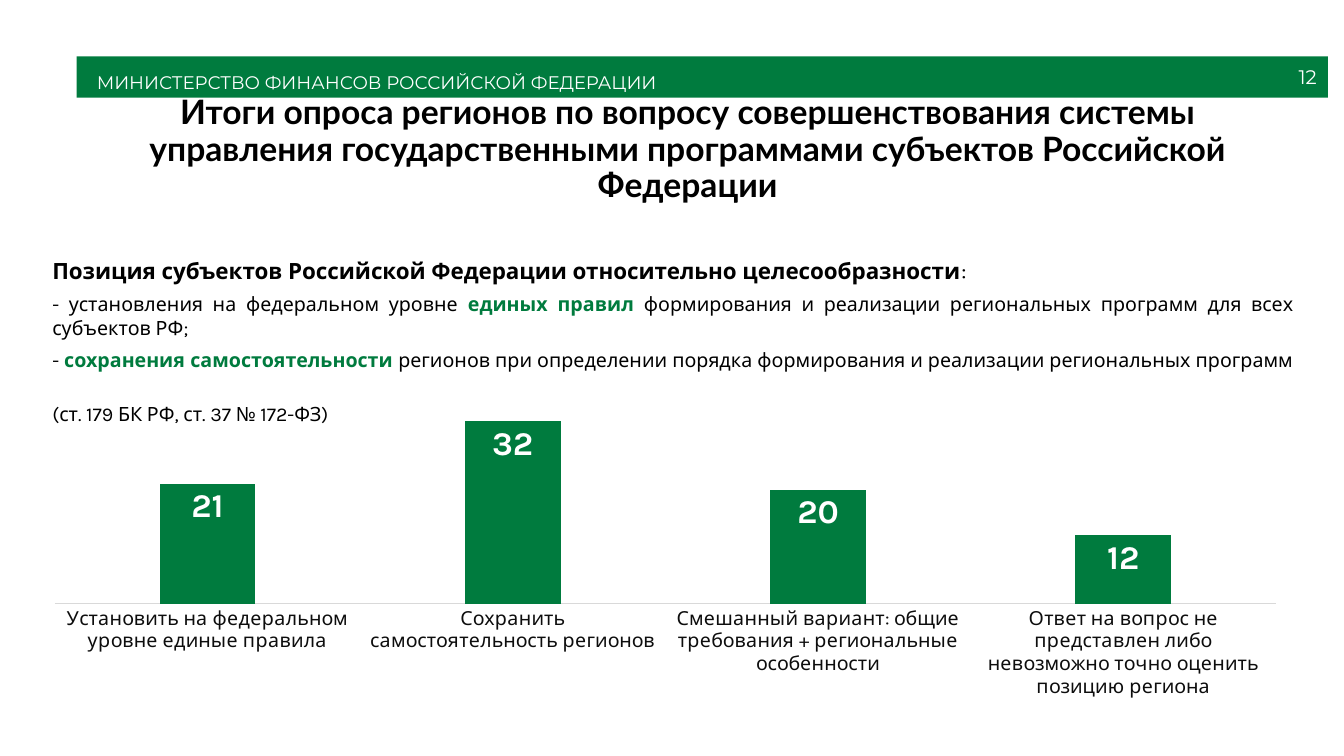
from lxml import etree
from pptx import Presentation
from pptx.chart.data import CategoryChartData
from pptx.dml.color import RGBColor
from pptx.enum.chart import XL_CHART_TYPE, XL_LABEL_POSITION, XL_TICK_LABEL_POSITION, XL_TICK_MARK
from pptx.enum.shapes import MSO_SHAPE
from pptx.enum.text import MSO_ANCHOR, PP_ALIGN
from pptx.oxml.ns import qn
from pptx.util import Inches, Pt

GREEN = RGBColor(0x00, 0x7B, 0x3E)
WHITE = RGBColor(0xFF, 0xFF, 0xFF)
BLACK = RGBColor(0x00, 0x00, 0x00)
DARK = RGBColor(0x0D, 0x0D, 0x0D)
AXIS_GREY = RGBColor(0xD9, 0xD9, 0xD9)

MINISTRY = "МИНИСТЕРСТВО ФИНАНСОВ РОССИЙСКОЙ ФЕДЕРАЦИИ"
PAGE_NUMBER = "12"
TITLE = ("Итоги опроса регионов по вопросу совершенствования системы управления "
         "государственными программами субъектов Российской Федерации")
PLAIN = {"size": 14}
HEADING = {"size": 16, "bold": True}
ACCENT = {"size": 14, "bold": True, "color": GREEN}
POSITION = [
    [("Позиция субъектов Российской Федерации относительно целесообразности", HEADING),
     (":", {"size": 16})],
    [("- установления на федеральном уровне ", PLAIN),
     ("единых правил ", ACCENT),
     ("формирования и реализации региональных программ для всех субъектов РФ;", PLAIN)],
    [("- ", PLAIN),
     ("сохранения самостоятельности ", ACCENT),
     ("регионов при определении порядка формирования и реализации региональных программ "
      "\n(ст. 179 БК РФ, ст. 37 № 172-ФЗ)", PLAIN)],
]
ANSWERS = {
    "Установить на федеральном уровне единые правила": 21,
    "Сохранить самостоятельность регионов": 32,
    "Смешанный вариант: общие требования + региональные особенности": 20,
    "Ответ на вопрос не представлен либо невозможно точно оценить позицию региона": 12,
}
PLOT_LAYOUT = {"layoutTarget": "inner", "xMode": "edge", "yMode": "edge",
               "x": 0.01, "y": 0.04, "w": 0.98, "h": 0.66}


def box(left, top, width, height):
    return [Inches(length) for length in (left, top, width, height)]


def format_font(font, size=14, name="Karla", color=BLACK, bold=False):
    font.size = Pt(size)
    font.name = name
    font.bold = bold
    font.color.rgb = color


def add_text(paragraph, text, **style):
    for index, line in enumerate(text.split("\n")):
        if index:
            paragraph.add_line_break()
        run = paragraph.add_run()
        run.text = line
        format_font(run.font, **style)


def add_header(slide):
    band = slide.shapes.add_shape(MSO_SHAPE.RECTANGLE, *box(0.76, 0.56, 12.41, 0.41))
    band.shadow.inherit = False
    band.fill.solid()
    band.fill.fore_color.rgb = GREEN
    band.line.fill.background()
    frame = band.text_frame
    frame.margin_left, frame.margin_right = Inches(0.2), 0
    frame.margin_top, frame.margin_bottom = Inches(0.04), Inches(0.08)
    frame.vertical_anchor = MSO_ANCHOR.TOP
    paragraph = frame.paragraphs[0]
    paragraph.alignment = PP_ALIGN.LEFT
    paragraph.line_spacing = 1.5
    add_text(paragraph, MINISTRY, size=13, name="Montserrat", color=WHITE)


def add_position(slide):
    frame = slide.shapes.add_textbox(*box(0.42, 2.5, 12.51, 1.25)).text_frame
    frame.word_wrap = True
    for index, runs in enumerate(POSITION):
        paragraph = frame.add_paragraph() if index else frame.paragraphs[0]
        paragraph.alignment = PP_ALIGN.JUSTIFY
        paragraph.space_after = Pt(6)
        for text, style in runs:
            add_text(paragraph, text, **style)


def set_plot_layout(chart):
    plot_area = chart._chartSpace.find(".//" + qn("c:plotArea"))
    for layout in plot_area.findall(qn("c:layout")):
        plot_area.remove(layout)
    layout = etree.Element(qn("c:layout"))
    manual = etree.SubElement(layout, qn("c:manualLayout"))
    for tag, value in PLOT_LAYOUT.items():
        etree.SubElement(manual, qn("c:" + tag)).set("val", str(value))
    plot_area.insert(0, layout)


def add_answers_chart(slide):
    data = CategoryChartData()
    data.categories = list(ANSWERS)
    data.add_series("Series 1", list(ANSWERS.values()))
    chart = slide.shapes.add_chart(
        XL_CHART_TYPE.COLUMN_CLUSTERED, *box(0.42, 3.89, 12.36, 3.04), data).chart
    chart.has_legend = False
    chart.has_title = False
    format_font(chart.font, size=10, color=DARK)
    set_plot_layout(chart)

    values = chart.value_axis
    values.minimum_scale, values.maximum_scale = 0, 35
    values.has_major_gridlines = False
    values.visible = False

    categories = chart.category_axis
    categories.major_tick_mark = XL_TICK_MARK.NONE
    categories.tick_label_position = XL_TICK_LABEL_POSITION.NEXT_TO_AXIS
    categories.format.line.color.rgb = AXIS_GREY
    categories.format.line.width = Pt(0.75)
    format_font(categories.tick_labels.font, color=DARK)

    plot = chart.plots[0]
    plot.gap_width, plot.overlap = 219, -27
    plot.vary_by_categories = False
    series = plot.series[0]
    series.format.fill.solid()
    series.format.fill.fore_color.rgb = GREEN
    labels = series.data_labels
    labels.show_value = True
    labels.position = XL_LABEL_POSITION.INSIDE_END
    format_font(labels.font, size=24, color=WHITE, bold=True)


def add_title(slide):
    title = slide.shapes.title
    title.left, title.top, title.width, title.height = box(1.07, 0.99, 11.5, 1)
    title.text_frame.vertical_anchor = MSO_ANCHOR.MIDDLE
    paragraph = title.text_frame.paragraphs[0]
    paragraph.alignment = PP_ALIGN.CENTER
    paragraph.line_spacing = 0.9
    add_text(paragraph, TITLE, size=24, name="Lato", bold=True)


def add_page_number(slide):
    frame = slide.shapes.add_textbox(*box(10.16, 0.56, 3, 0.4)).text_frame
    frame.word_wrap = True
    frame.vertical_anchor = MSO_ANCHOR.MIDDLE
    paragraph = frame.paragraphs[0]
    paragraph.alignment = PP_ALIGN.RIGHT
    add_text(paragraph, PAGE_NUMBER, name="Montserrat", color=WHITE)


def main():
    """Build the slide with the results of the regional survey."""
    presentation = Presentation()
    presentation.slide_width, presentation.slide_height = Inches(13.33), Inches(7.5)
    slide = presentation.slides.add_slide(presentation.slide_layouts[5])
    add_header(slide)
    add_position(slide)
    add_answers_chart(slide)
    add_title(slide)
    add_page_number(slide)
    presentation.save("out.pptx")


if __name__ == "__main__":
    main()
